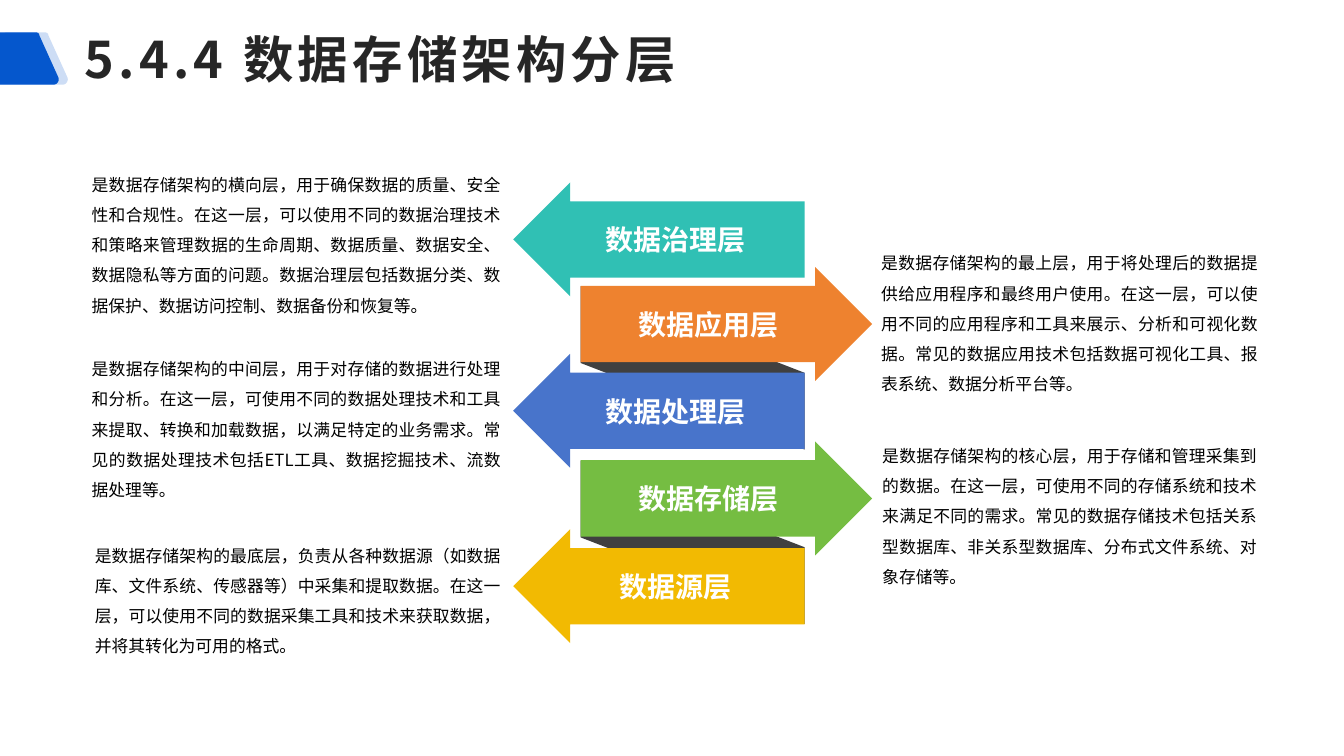
"""Build the slide on the layers of a data storage architecture."""
from dataclasses import dataclass

from lxml.etree import SubElement
from pptx import Presentation
from pptx.dml.color import RGBColor
from pptx.enum.shapes import MSO_SHAPE
from pptx.enum.text import MSO_ANCHOR, MSO_AUTO_SIZE, PP_ALIGN
from pptx.oxml.ns import qn
from pptx.util import Inches, Pt

FONT = "Noto Sans CJK SC"
BLUE = "0557CD"
ARROW_W, ARROW_H = 2.89, 1.13
LEFT_X, RIGHT_X = 5.09, 5.76
BADGE_CORNERS = [
    ((-0.06, 0.35), (-0.05, 0.33), (-0.04, 0.32), (-0.02, 0.32)),
    ((0.35, 0.32), (0.37, 0.32), (0.39, 0.33), (0.39, 0.35)),
    ((0.58, 0.77), (0.59, 0.80), (0.57, 0.84), (0.53, 0.84)),
    ((-0.20, 0.84), (-0.24, 0.84), (-0.26, 0.80), (-0.25, 0.77)),
]


@dataclass
class Layer:
    """An arrow with its label and the description beside it."""
    name: str
    color: str
    points_right: bool
    top: float
    note_at: tuple[float, float, float, float]
    note: str


LAYERS = [
    Layer("数据应用层", "EE822F", True, 2.65, (8.74, 2.41, 3.74, 1.51),
          "是数据存储架构的最上层，用于将处理后的数据提供给应用程序和最终用户使用。"
          "在这一层，可以使用不同的应用程序和工具来展示、分析和可视化数据。"
          "常见的数据应用技术包括数据可视化工具、报表系统、数据分析平台等。"),
    Layer("数据存储层", "75BD42", True, 4.38, (8.75, 4.32, 3.72, 1.51),
          "是数据存储架构的核心层，用于存储和管理采集到的数据。"
          "在这一层，可使用不同的存储系统和技术来满足不同的需求。"
          "常见的数据存储技术包括关系型数据库、非关系型数据库、分布式文件系统、对象存储等。"),
    Layer("数据治理层", "30C0B4", False, 1.81, (0.91, 1.63, 4.06, 1.51),
          "是数据存储架构的横向层，用于确保数据的质量、安全性和合规性。"
          "在这一层，可以使用不同的数据治理技术和策略来管理数据的生命周期、数据质量、"
          "数据安全、数据隐私等方面的问题。"
          "数据治理层包括数据分类、数据保护、数据访问控制、数据备份和恢复等。"),
    Layer("数据处理层", "4874CB", False, 3.51, (0.91, 3.46, 4.06, 1.51),
          "是数据存储架构的中间层，用于对存储的数据进行处理和分析。"
          "在这一层，可使用不同的数据处理技术和工具来提取、转换和加载数据，以满足特定的业务需求。"
          "常见的数据处理技术包括ETL工具、数据挖掘技术、流数据处理等。"),
    Layer("数据源层", "F2BA02", False, 5.25, (0.94, 5.31, 4.03, 1.21),
          "是数据存储架构的最底层，负责从各种数据源（如数据库、文件系统、传感器等）中采集和提取数据。"
          "在这一层，可以使用不同的数据采集工具和技术来获取数据，并将其转化为可用的格式。"),
]


def paint(s, color: str, alpha: int = 100) -> None:
    """Give a shape a plain fill without line or shadow."""
    s.shadow.inherit = False
    s.fill.solid()
    s.fill.fore_color.rgb = RGBColor.from_string(color)
    s.line.fill.background()
    if alpha < 100:
        clr = s._element.spPr.find(f"{qn('a:solidFill')}/{qn('a:srgbClr')}")
        SubElement(clr, qn("a:alpha")).set("val", str(alpha * 1000))


def write(tf, text: str, *, size: float, color: str, bold: bool = False,
          align=PP_ALIGN.LEFT, line_spacing: float = 1.0, tracking: float = 0) -> None:
    """Write one formatted paragraph into a text frame."""
    tf.word_wrap = True
    p = tf.paragraphs[0]
    p.alignment = align
    p.line_spacing = line_spacing
    r = p.add_run()
    r.text = text
    r.font.size = Pt(size)
    r.font.bold = bold
    r.font.name = FONT
    r.font.color.rgb = RGBColor.from_string(color)
    rPr = r.font._element
    SubElement(rPr, qn("a:ea")).set("typeface", FONT)
    if tracking:
        rPr.set("spc", str(int(tracking * 100)))


def add_text(shapes, at: tuple[float, float, float, float], text: str, **fmt) -> None:
    """Add a text box without margins."""
    tf = shapes.add_textbox(*map(Inches, at)).text_frame
    tf.margin_left = tf.margin_right = tf.margin_top = tf.margin_bottom = 0
    write(tf, text, **fmt)
    tf.auto_size = MSO_AUTO_SIZE.SHAPE_TO_FIT_TEXT


def add_badge(shapes, dx: float, alpha: int) -> None:
    """Draw the trapezoid with rounded corners, moved right by dx."""
    points = []
    for corner in BADGE_CORNERS:
        for t in (i / 6 for i in range(7)):
            weights = ((1 - t) ** 3, 3 * t * (1 - t) ** 2, 3 * t * t * (1 - t), t ** 3)
            x, y = (sum(w * c[k] for w, c in zip(weights, corner)) for k in (0, 1))
            points.append((Inches(x + dx), Inches(y)))
    builder = shapes.build_freeform(*points[0])
    builder.add_line_segments(points[1:], close=True)
    paint(builder.convert_to_shape(), BLUE, alpha)


def add_fold(shapes, top: float) -> None:
    """Draw the dark fold between two arrows."""
    s = shapes.add_shape(MSO_SHAPE.PARALLELOGRAM, Inches(6.06), Inches(top),
                         Inches(1.62), Inches(2.22))
    s.rotation = 270
    s.adjustments[0] = 0.53
    paint(s, "404040")


def add_layer(shapes, layer: Layer) -> None:
    """Draw the arrow, label and description of a layer."""
    x = RIGHT_X if layer.points_right else LEFT_X
    s = shapes.add_shape(MSO_SHAPE.RIGHT_ARROW, Inches(x), Inches(layer.top),
                         Inches(ARROW_W), Inches(ARROW_H))
    s.rotation = 0 if layer.points_right else 180
    s.adjustments[0] = 0.67
    s.adjustments[1] = 0.5
    paint(s, layer.color)
    label_x = x + (0.33 if layer.points_right else 0.67)
    add_text(shapes, (label_x, layer.top + 0.4, 1.88, 0.34), layer.name,
             size=20, color="FFFFFF", bold=True, align=PP_ALIGN.CENTER)
    add_text(shapes, layer.note_at, layer.note, size=12, color="000000",
             align=PP_ALIGN.JUSTIFY, line_spacing=1.5)


def main() -> None:
    """Build and save the slide."""
    prs = Presentation()
    prs.slide_width, prs.slide_height = Inches(13.33), Inches(7.5)
    shapes = prs.slides.add_slide(prs.slide_layouts[5]).shapes
    title = shapes.title
    title.left, title.top = Inches(0.74), Inches(0.08)
    title.width, title.height = Inches(12.59), Inches(1)
    title.text_frame.vertical_anchor = MSO_ANCHOR.MIDDLE
    write(title.text_frame, "5.4.4 数据存储架构分层", size=36, color="262626",
          bold=True, tracking=3)
    add_badge(shapes, 0.09, 20)
    add_badge(shapes, 0, 100)
    for top in (4.27, 2.54):
        add_fold(shapes, top)
    for layer in LAYERS:
        add_layer(shapes, layer)
    prs.save("out.pptx")


if __name__ == "__main__":
    main()
